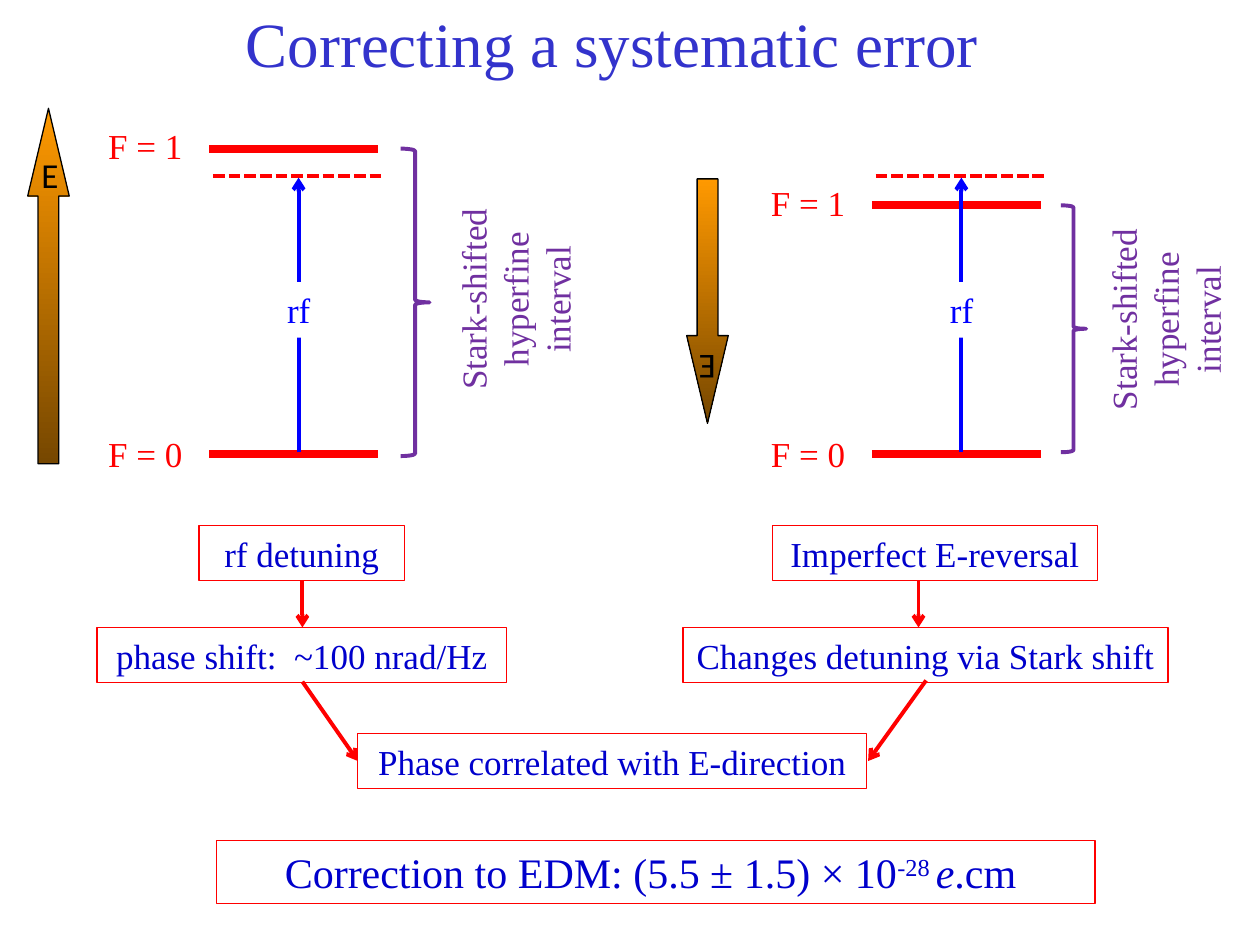
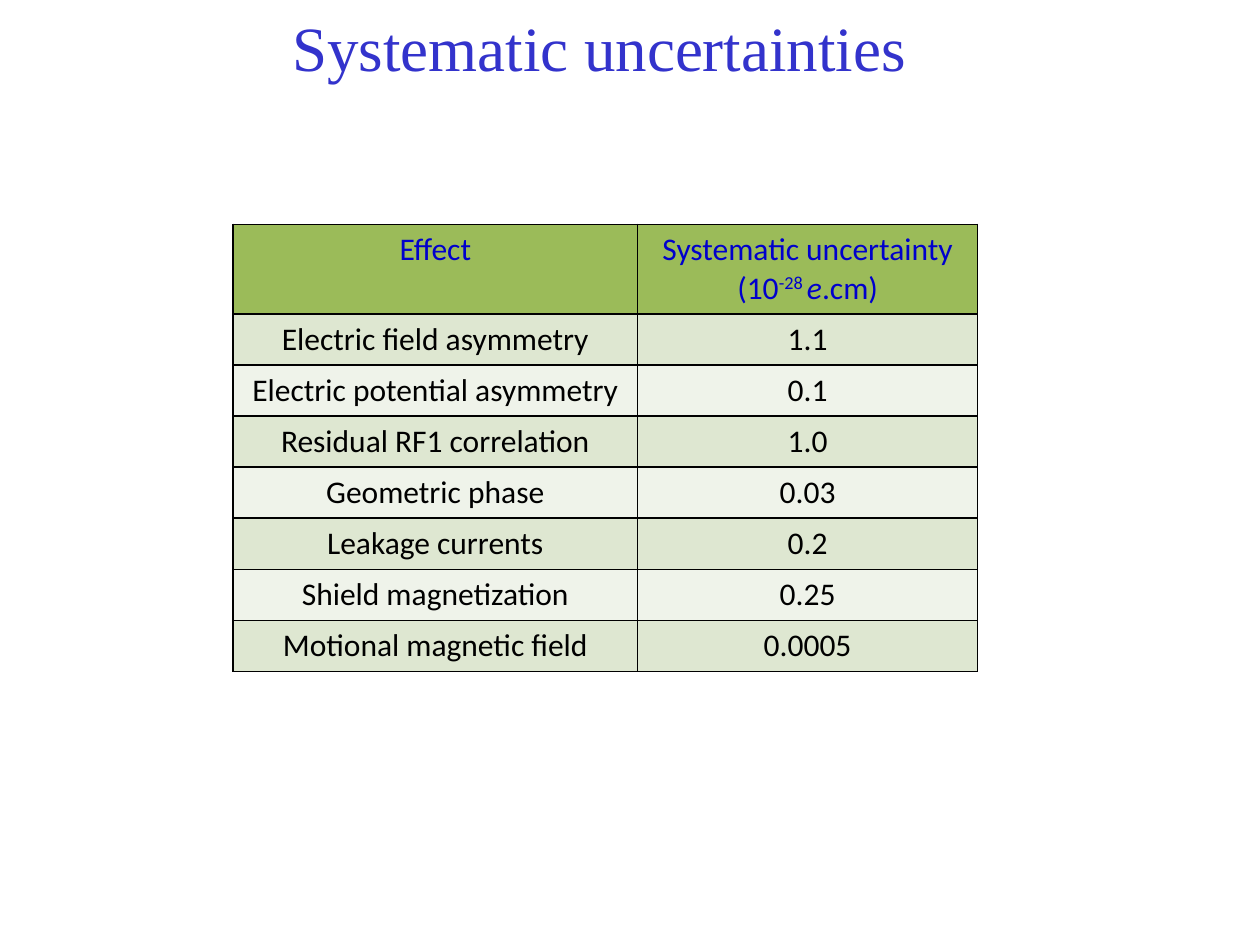
from lxml import etree
from pptx import Presentation
from pptx.dml.color import RGBColor
from pptx.enum.dml import MSO_LINE
from pptx.enum.shapes import MSO_CONNECTOR, MSO_SHAPE
from pptx.enum.text import MSO_ANCHOR, MSO_AUTO_SIZE, PP_ALIGN
from pptx.oxml.ns import qn
from pptx.util import Pt

PX = 9144  # 100 px to the inch
SERIF, SANS = "Times New Roman", "Calibri"
LEFT, CENTER = PP_ALIGN.LEFT, PP_ALIGN.CENTER
TOP, MIDDLE = MSO_ANCHOR.TOP, MSO_ANCHOR.MIDDLE
NO_AUTOFIT = MSO_AUTO_SIZE.NONE
STRAIGHT = MSO_CONNECTOR.STRAIGHT
RECTANGLE, UP_ARROW = MSO_SHAPE.RECTANGLE, MSO_SHAPE.UP_ARROW
RIGHT_BRACE = MSO_SHAPE.RIGHT_BRACE
SHORT_DASH = MSO_LINE.SQUARE_DOT
TITLE_ONLY = 5

BLACK = RGBColor(0x00, 0x00, 0x00)
WHITE = RGBColor(0xFF, 0xFF, 0xFF)
RED = RGBColor(0xFF, 0x00, 0x00)
BLUE = RGBColor(0x00, 0x00, 0xFF)
INK_BLUE = RGBColor(0x00, 0x00, 0xCC)
TITLE_BLUE = RGBColor(0x33, 0x33, 0xCC)
PURPLE = RGBColor(0x70, 0x30, 0xA0)
ORANGE = RGBColor(0xFF, 0x99, 0x00)
BROWN = RGBColor(0x76, 0x47, 0x00)
HEADER_GREEN = RGBColor(0x9B, 0xBB, 0x59)
BAND_GREENS = RGBColor(0xDE, 0xE7, 0xD1), RGBColor(0xEF, 0xF3, 0xEA)

# Text is a list of (words, style) spans; style is "", "super" or "italic".
UNIT = [("-28 ", "super"), ("e", "italic")]
ERROR_TITLE = ("Correcting a systematic error", (185, -3, 717, 73))
TABLE_TITLE = ("Systematic uncertainties", (222, 0, 545, 73))

LEVEL_DIAGRAMS = [
    {"left": 166, "upper_level": 118, "upper_label": 94,
     "field": (22, 86, 33, 282), "field_label": (23, 117, 41, 44), "turn": 0,
     "brace": (318, 118, 23, 244), "interval": (283, 199, 218, 77)},
    {"left": 692, "upper_level": 163, "upper_label": 139,
     "field": (545, 142, 33, 194), "field_label": (537, 285, 41, 30), "turn": 180,
     "brace": (842, 163, 20, 196), "interval": (799, 215, 218, 77)},
]
LOWER_LEVEL, LOWER_LABEL, RF_LEVEL = 360, 338, 140
LEVEL_WIDTH = 134

FLOW_BOXES = [
    ("rf detuning", (158, 417, 163, 44)),
    ("phase shift:  ~100 nrad/Hz", (77, 498, 325, 44)),
    ("Imperfect E-reversal", (613, 417, 258, 44)),
    ("Changes detuning via Stark shift", (542, 498, 385, 44)),
    ("Phase correlated with E-direction", (284, 582, 404, 44)),
]
FLOW_ARROWS = [
    ((240, 461), (240, 498)),
    ((729, 461), (729, 498)),
    ((240, 541), (284, 604)),
    ((735, 540), (689, 604)),
]
RESULT = [("Correction to EDM: (5.5 ± 1.5) × 10", ""), *UNIT, (".cm ", "")]
RESULT_BOX = (172, 667, 697, 50)

HEADER = [
    [("Effect", "")],
    [("Systematic uncertainty (10", ""), *UNIT, (".cm)", "")],
]
UNCERTAINTIES = [
    ("Electric field asymmetry", "1.1"),
    ("Electric potential asymmetry", "0.1"),
    ("Residual RF1 correlation", "1.0"),
    ("Geometric phase", "0.03"),
    ("Leakage currents", "0.2"),
    ("Shield magnetization", "0.25"),
    ("Motional magnetic field", "0.0005"),
]
TABLE_LEFT, TABLE_TOP = 185, 178
COLUMN_WIDTHS = 321, 270
HEADER_HEIGHT, ROW_HEIGHT = 71, 40


def emu(lengths):
    return [length * PX for length in lengths]


def write(frame, text, size, color, font=SERIF, align=LEFT):
    """Fill the first paragraph with a plain string or a list of spans."""
    para = frame.paragraphs[0]
    para.alignment = align
    for words, style in [(text, "")] if isinstance(text, str) else text:
        span = para.add_run()
        span.text = words
        span.font.name, span.font.size = font, Pt(size)
        span.font.color.rgb = color
        span.font.bold = False
        span.font.italic = style == "italic"
        if style == "super":
            span._r.get_or_add_rPr().set("baseline", "30000")


def add_page(deck, title, place):
    page = deck.slides.add_slide(deck.slide_layouts[TITLE_ONLY])
    box = page.shapes.title
    box.left, box.top, box.width, box.height = emu(place)
    box.text_frame.auto_size = NO_AUTOFIT
    box.text_frame.vertical_anchor = MIDDLE
    write(box.text_frame, title, 36, TITLE_BLUE)
    return page


def add_label(page, text, place, color, font=SERIF, align=LEFT, turn=0, wrap=True):
    box = page.shapes.add_textbox(*emu(place))
    box.rotation = turn
    box.text_frame.word_wrap = wrap
    box.text_frame.vertical_anchor = TOP
    write(box.text_frame, text, 20, color, font, align)


def add_preset(page, kind, place, line=None, weight=0.75):
    """Add an unfilled, shadowless shape, outlined only if line is given."""
    shape = page.shapes.add_shape(kind, *emu(place))
    shape.shadow.inherit = False
    shape.fill.background()
    if line is None:
        shape.line.fill.background()
    else:
        shape.line.color.rgb = line
        shape.line.width = Pt(weight)
    return shape


def add_framed_text(page, text, place, size=20):
    box = add_preset(page, RECTANGLE, place, RED)
    box.text_frame.word_wrap = True
    write(box.text_frame, text, size, INK_BLUE, align=CENTER)


def add_line(page, start, end, color, weight=2.25, dash=None, arrow=False):
    line = page.shapes.add_connector(STRAIGHT, *emu(start), *emu(end))
    line.line.color.rgb = color
    line.line.width = Pt(weight)
    if dash is not None:
        line.line.dash_style = dash
    if arrow:
        etree.SubElement(line.line._get_or_add_ln(), qn("a:tailEnd"), type="arrow")
    etree.SubElement(line._element.spPr, qn("a:effectLst"))


def add_field_arrow(page, place, turn):
    arrow = add_preset(page, UP_ARROW, place, BLACK)
    arrow.adjustments[0], arrow.adjustments[1] = 0.5, 2.11
    arrow.rotation = turn
    arrow.fill.gradient()
    # The gradient turns with the shape, so it is turned back to run downwards.
    arrow.fill.gradient_angle = (270 + turn) % 360
    for stop, color in zip(arrow.fill.gradient_stops, (ORANGE, BROWN)):
        stop.color.rgb = color


def draw_levels(page, diagram):
    left, upper = diagram["left"], diagram["upper_level"]
    right, rf_x = left + LEVEL_WIDTH, left + 71
    for level in (LOWER_LEVEL, upper):
        add_line(page, (left, level), (right, level), RED, 4.5)
    add_line(page, (left + 3, RF_LEVEL), (right + 3, RF_LEVEL), RED, dash=SHORT_DASH)
    add_line(page, (rf_x, LOWER_LEVEL - 1), (rf_x, RF_LEVEL + 1), BLUE, arrow=True)
    for text, top in (("F = 0", LOWER_LABEL), ("F = 1", diagram["upper_label"])):
        add_label(page, text, (left - 90, top, 80, 44), RED, wrap=False)

    rf_box = add_preset(page, RECTANGLE, (left + 52, 224, 39, 44))
    rf_box.fill.solid()
    rf_box.fill.fore_color.rgb = WHITE
    rf_box.text_frame.word_wrap = False
    write(rf_box.text_frame, "rf", 20, BLUE)

    add_field_arrow(page, diagram["field"], diagram["turn"])
    add_label(page, "E", diagram["field_label"], BLACK, SANS, turn=diagram["turn"])
    add_preset(page, RIGHT_BRACE, diagram["brace"], PURPLE, 2.25)
    add_label(page, "Stark-shifted hyperfine interval", diagram["interval"],
              PURPLE, align=CENTER, turn=270)


def add_borders(cell):
    properties = cell._tc.get_or_add_tcPr()
    for side in ("a:lnL", "a:lnR", "a:lnT", "a:lnB"):
        border = etree.SubElement(properties, qn(side), w=str(Pt(1)))
        fill = etree.SubElement(border, qn("a:solidFill"))
        etree.SubElement(fill, qn("a:srgbClr"), val=str(BLACK))


def draw_table(page):
    rows = [HEADER, *UNCERTAINTIES]
    heights = [HEADER_HEIGHT] + [ROW_HEIGHT] * len(UNCERTAINTIES)
    place = (TABLE_LEFT, TABLE_TOP, sum(COLUMN_WIDTHS), sum(heights))
    table = page.shapes.add_table(len(rows), len(COLUMN_WIDTHS), *emu(place)).table
    for column, width in zip(table.columns, emu(COLUMN_WIDTHS)):
        column.width = width
    for row, height in zip(table.rows, emu(heights)):
        row.height = height
    for r, row in enumerate(rows):
        background = BAND_GREENS[(r - 1) % 2] if r else HEADER_GREEN
        for c, text in enumerate(row):
            cell = table.cell(r, c)
            add_borders(cell)
            cell.fill.solid()
            cell.fill.fore_color.rgb = background
            write(cell.text_frame, text, 18, BLACK if r else INK_BLUE, SANS, CENTER)


def main():
    deck = Presentation()
    deck.slide_width, deck.slide_height = emu((1000, 750))

    page = add_page(deck, *ERROR_TITLE)
    for diagram in LEVEL_DIAGRAMS:
        draw_levels(page, diagram)
    for text, place in FLOW_BOXES:
        add_framed_text(page, text, place)
    for start, end in FLOW_ARROWS:
        add_line(page, start, end, RED, arrow=True)
    add_framed_text(page, RESULT, RESULT_BOX, 24)

    draw_table(add_page(deck, *TABLE_TITLE))
    deck.save("out.pptx")


if __name__ == "__main__":
    main()
